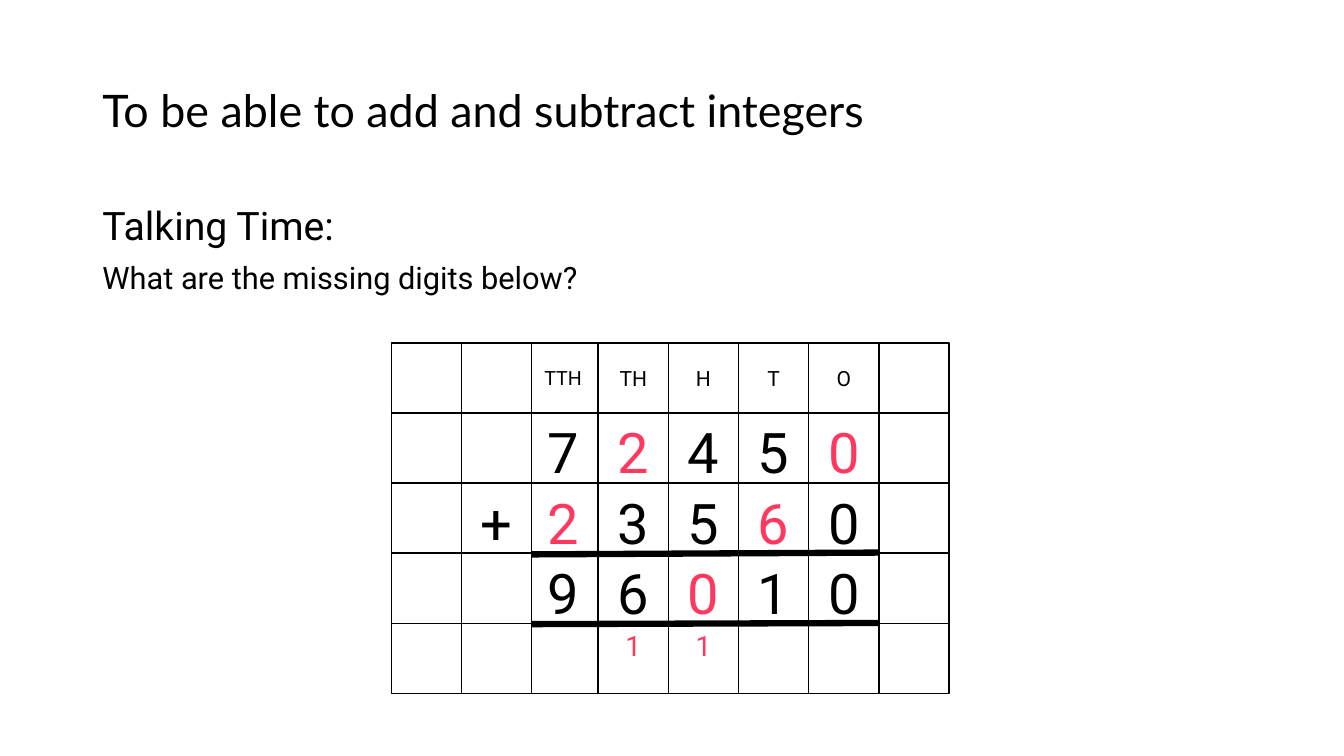
from lxml import etree
from pptx import Presentation
from pptx import util as u
from pptx.dml.color import RGBColor
from pptx.enum import shapes, text
from pptx.oxml.ns import qn

COLOURS = {"ink": "000000", "paper": "FFFFFF", "answer": "FF3860"}
CELL, PITCH = 50, 50.1
GRID_TOP = 244.9
SIGN_LEFT, DIGITS_LEFT = 279.5, 377.3

# Each row: digits from TTH to O, then the columns whose digit is an answer
HEADINGS = ["TTH", "TH", "H", "T", "O"]
SUM_ROWS = [("72450", (1, 4)), ("23560", (0, 3)), ("96010", (2,))]
CARRIES = {1: "1", 2: "1"}


def colour(name):
    return RGBColor.from_string(COLOURS[name])


def write(paragraph, words, size=22, font="Roboto", ink="ink",
          align=text.PP_ALIGN.LEFT, line_spacing=None, before=0):
    paragraph.text = words
    paragraph.alignment = align
    paragraph.space_before = u.Pt(before)
    if line_spacing:
        paragraph.line_spacing = line_spacing
    paragraph.font.size = u.Pt(size)
    paragraph.font.name = font
    paragraph.font.color.rgb = colour(ink)


class SumSlide:
    def __init__(self, presentation):
        self.slide = presentation.slides.add_slide(presentation.slide_layouts[1])

    def place(self, placeholder, left, top, width, height, anchor):
        placeholder.left, placeholder.top = u.Pt(left), u.Pt(top)
        placeholder.width, placeholder.height = u.Pt(width), u.Pt(height)
        frame = placeholder.text_frame
        frame.auto_size = text.MSO_AUTO_SIZE.NONE
        frame.vertical_anchor = anchor
        return frame

    def title(self, words):
        frame = self.place(self.slide.shapes.title, 66, 28.8, 691, 104.4,
                           text.MSO_ANCHOR.MIDDLE)
        write(frame.paragraphs[0], words, size=32, font="Lato", line_spacing=0.9)

    def body(self, lines):
        frame = self.place(self.slide.placeholders[1], 66, 144, 828, 342.7,
                           text.MSO_ANCHOR.TOP)
        for index, (words, size) in enumerate(lines):
            paragraph = frame.add_paragraph() if index else frame.paragraphs[0]
            properties = paragraph._p.get_or_add_pPr()
            properties.set("marL", "0")
            properties.set("indent", "0")
            etree.SubElement(properties, qn("a:buNone"))
            write(paragraph, words, size=size, line_spacing=0.9,
                  before=10 if index else 0)

    def cell(self, left, row, words="", size=40, ink="ink",
             anchor=text.MSO_ANCHOR.TOP):
        shape = self.slide.shapes.add_shape(
            shapes.MSO_SHAPE.RECTANGLE, u.Pt(left),
            u.Pt(GRID_TOP + row * PITCH), u.Pt(CELL), u.Pt(CELL))
        shape.shadow.inherit = False
        shape.fill.solid()
        shape.fill.fore_color.rgb = colour("paper")
        shape.line.color.rgb = colour("ink")
        shape.line.width = u.Pt(1)
        if words:
            shape.text_frame.vertical_anchor = anchor
            write(shape.text_frame.paragraphs[0], words, size=size, ink=ink,
                  align=text.PP_ALIGN.CENTER)

    def rule(self, start, end):
        line = self.slide.shapes.add_connector(
            shapes.MSO_CONNECTOR.STRAIGHT, *map(u.Pt, start + end))
        line.line.color.rgb = colour("ink")
        line.line.width = u.Pt(4.5)
        etree.SubElement(line._element.spPr, qn("a:effectLst"))


def main():
    presentation = Presentation()
    presentation.slide_width, presentation.slide_height = u.Pt(960), u.Pt(540)
    page = SumSlide(presentation)

    # Heading and question
    page.title("To be able to add and subtract integers")
    page.body([("Talking Time:", 28), ("What are the missing digits below?", 22)])

    # Place-value columns
    for column, heading in enumerate(HEADINGS):
        left = DIGITS_LEFT + column * PITCH
        page.cell(left, 0, heading, size=15 if column else 14,
                  anchor=text.MSO_ANCHOR.MIDDLE)
        for row, (digits, answers) in enumerate(SUM_ROWS, start=1):
            page.cell(left, row, digits[column],
                      ink="answer" if column in answers else "ink")
        page.cell(left, 4, CARRIES.get(column, ""), size=20, ink="answer")

    # Empty column on the right
    right = DIGITS_LEFT + len(HEADINGS) * PITCH
    for row in range(5):
        page.cell(right, row)

    # Rules above and below the total
    page.rule((SIGN_LEFT + PITCH, 446), (right, 445))
    page.rule((DIGITS_LEFT, 396), (right, 394.7))

    # Margin and sign columns on the left
    for column in range(2):
        for row in range(5):
            page.cell(SIGN_LEFT + column * PITCH, row,
                      "+" if (column, row) == (1, 2) else "")

    presentation.save("out.pptx")


if __name__ == "__main__":
    main()
